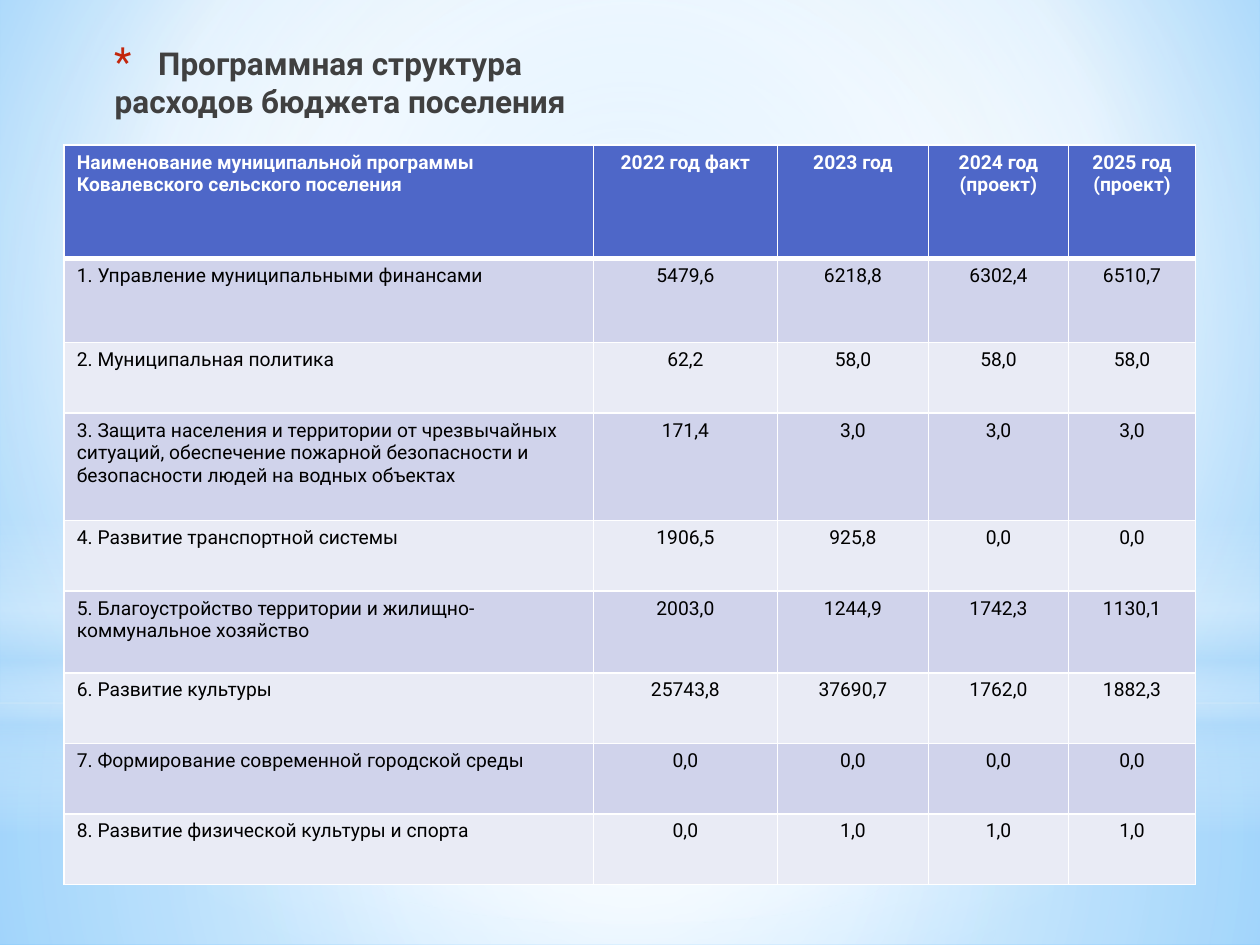
from lxml.etree import SubElement
from pptx import Presentation
from pptx.dml.color import RGBColor
from pptx.enum.shapes import MSO_SHAPE
from pptx.enum.text import MSO_ANCHOR, PP_ALIGN
from pptx.oxml.ns import qn
from pptx.util import Inches, Pt

CENTRE = (50, 50, 50, 50)
HEADER = ["Наименование муниципальной программы Ковалевского сельского поселения",
          "2022 год факт", "2023 год", "2024 год\n(проект)", "2025 год\n(проект)"]
PROGRAMMES = [
    ["1. Управление муниципальными финансами", "5479,6", "6218,8", "6302,4", "6510,7"],
    ["2. Муниципальная политика", "62,2", "58,0", "58,0", "58,0"],
    ["3. Защита населения и территории от чрезвычайных ситуаций, обеспечение "
     "пожарной безопасности и безопасности людей на водных объектах",
     "171,4", "3,0", "3,0", "3,0"],
    ["4. Развитие транспортной системы", "1906,5", "925,8", "0,0", "0,0"],
    ["5. Благоустройство территории и жилищно-коммунальное хозяйство",
     "2003,0", "1244,9", "1742,3", "1130,1"],
    ["6. Развитие культуры", "25743,8", "37690,7", "1762,0", "1882,3"],
    ["7. Формирование современной городской среды", "0,0", "0,0", "0,0", "0,0"],
    ["8. Развитие физической культуры и спорта", "0,0", "1,0", "1,0", "1,0"],
]
COLUMN_WIDTHS = [4.2, 1.46, 1.2, 1.11, 1.01]
ROW_HEIGHTS = [0.9, 0.67, 0.56, 0.85, 0.56, 0.65, 0.56, 0.56, 0.56]


def color(value):
    return RGBColor.from_string(value)


def add_color(parent, value, opacity=100):
    element = SubElement(parent, qn("a:srgbClr"), val=value)
    if opacity < 100:
        SubElement(element, qn("a:alpha"), val=str(opacity * 1000))


def set_gradient(fill, owner, stops, focus=None):
    fill.solid()
    fill.fore_color.rgb = color("FFFFFF")
    solid = owner.find(".//" + qn("a:solidFill"))
    gradient = SubElement(solid.getparent(), qn("a:gradFill"), rotWithShape="1")
    solid.getparent().replace(solid, gradient)
    stop_list = SubElement(gradient, qn("a:gsLst"))
    for position, *shade in stops:
        stop = SubElement(stop_list, qn("a:gs"), pos=str(position * 1000))
        add_color(stop, *shade)
    if focus:
        circle = SubElement(gradient, qn("a:path"), path="circle")
        sides = {side: str(value * 1000) for side, value in zip("ltrb", focus)}
        SubElement(circle, qn("a:fillToRect"), **sides)
    else:
        SubElement(gradient, qn("a:lin"), ang="5400000", scaled="0")


class SlideBuilder:
    font_name = "Roboto"
    header_fill = "4E67C8"
    band_fills = ("E9EBF5", "D0D3EB")
    border = "FFFFFF"

    def __init__(self, slide):
        self.slide = slide

    def background(self, stops, focus):
        set_gradient(self.slide.background.fill, self.slide.element, stops, focus)

    def glow(self, kind, top, height, stops, focus=None):
        shape = self.slide.shapes.add_shape(
            kind, 0, Inches(top), Inches(10), Inches(height))
        shape.shadow.inherit = False
        set_gradient(shape.fill, shape.element, stops, focus)
        shape.line.fill.background()

    def style(self, paragraph, size, bold):
        paragraph.font.name = self.font_name
        paragraph.font.size = Pt(size)
        paragraph.font.bold = bold

    def title(self, text, left, top, width, height):
        box = self.slide.shapes.add_textbox(
            Inches(left), Inches(top), Inches(width), Inches(height))
        frame = box.text_frame
        frame.word_wrap = True
        frame.vertical_anchor = MSO_ANCHOR.MIDDLE
        frame.text = text
        paragraph = frame.paragraphs[0]
        paragraph.alignment = PP_ALIGN.CENTER
        properties = paragraph._p.get_or_add_pPr()
        properties.set("marL", str(Inches(0.35)))
        properties.set("indent", str(Inches(-0.35)))
        add_color(SubElement(properties, qn("a:buClr")), "C3260C")
        SubElement(properties, qn("a:buSzPct"), val="128000")
        SubElement(properties, qn("a:buFont"), typeface=self.font_name)
        SubElement(properties, qn("a:buChar"), char="*")
        self.style(paragraph, 18, True)
        set_gradient(paragraph.font.fill, properties,
                     [(0, "000000"), (40, "404040"), (100, "212745", 65)])

    def borders(self, cell, top, bottom):
        properties = cell._tc.get_or_add_tcPr()
        for side, width in (("L", 1), ("R", 1), ("T", top), ("B", bottom)):
            line = SubElement(properties, qn("a:ln" + side), w=str(Pt(width)))
            add_color(SubElement(line, qn("a:solidFill")), self.border)

    def table(self, left, top, rows, widths, heights):
        table = self.slide.shapes.add_table(
            len(rows), len(widths), Inches(left), Inches(top),
            Inches(sum(widths)), Inches(sum(heights))).table
        for column, width in zip(table.columns, widths):
            column.width = Inches(width)
        for row_index, (row, height) in enumerate(zip(rows, heights)):
            table.rows[row_index].height = Inches(height)
            for column_index, text in enumerate(row):
                self.cell(table.cell(row_index, column_index), text,
                          row_index, column_index)

    def cell(self, cell, text, row_index, column_index):
        is_header = row_index == 0
        self.borders(cell, 3 if row_index == 1 else 1, 3 if is_header else 1)
        cell.fill.solid()
        cell.fill.fore_color.rgb = color(
            self.header_fill if is_header else self.band_fills[row_index % 2])
        cell.text = text
        for paragraph in cell.text_frame.paragraphs:
            self.style(paragraph, 11, is_header)
            paragraph.font.color.rgb = color("FFFFFF" if is_header else "000000")
            paragraph.alignment = PP_ALIGN.CENTER if column_index else PP_ALIGN.LEFT


def main():
    presentation = Presentation()
    presentation.slide_width = Inches(10)
    presentation.slide_height = Inches(7.5)
    builder = SlideBuilder(presentation.slides.add_slide(presentation.slide_layouts[6]))
    builder.background([(0, "9ED5FF"), (60, "FFFFFF"), (100, "5BB9FF")], (20, 10, 20, 60))
    builder.glow(MSO_SHAPE.RECTANGLE, 5.58, 1.92,
                 [(0, "FFFFFF", 91), (37, "FFFFFF", 76), (100, "B4DCFA", 79)], CENTRE)
    builder.glow(MSO_SHAPE.RECTANGLE, 0, 5.58,
                 [(0, "FFFFFF", 89), (48, "FFFFFF", 62), (100, "B4DCFA", 79)], CENTRE)
    builder.glow(MSO_SHAPE.RECTANGLE, 4.12, 2.5,
                 [(0, "FFFFFF", 0), (29, "FFFFFF", 30), (45, "B4DCFA", 40),
                  (55, "FFFFFF", 26), (65, "B4DCFA", 60), (100, "FFFFFF", 0)])
    builder.glow(MSO_SHAPE.OVAL, 1.75, 5.58,
                 [(0, "FFFFFF"), (56, "FFFFFF", 0)], CENTRE)
    builder.title("Программная структура расходов бюджета поселения",
                  0.28, 0.29, 4.49, 0.72)
    builder.table(0.51, 1.15, [HEADER, *PROGRAMMES], COLUMN_WIDTHS, ROW_HEIGHTS)
    presentation.save("out.pptx")


if __name__ == "__main__":
    main()
